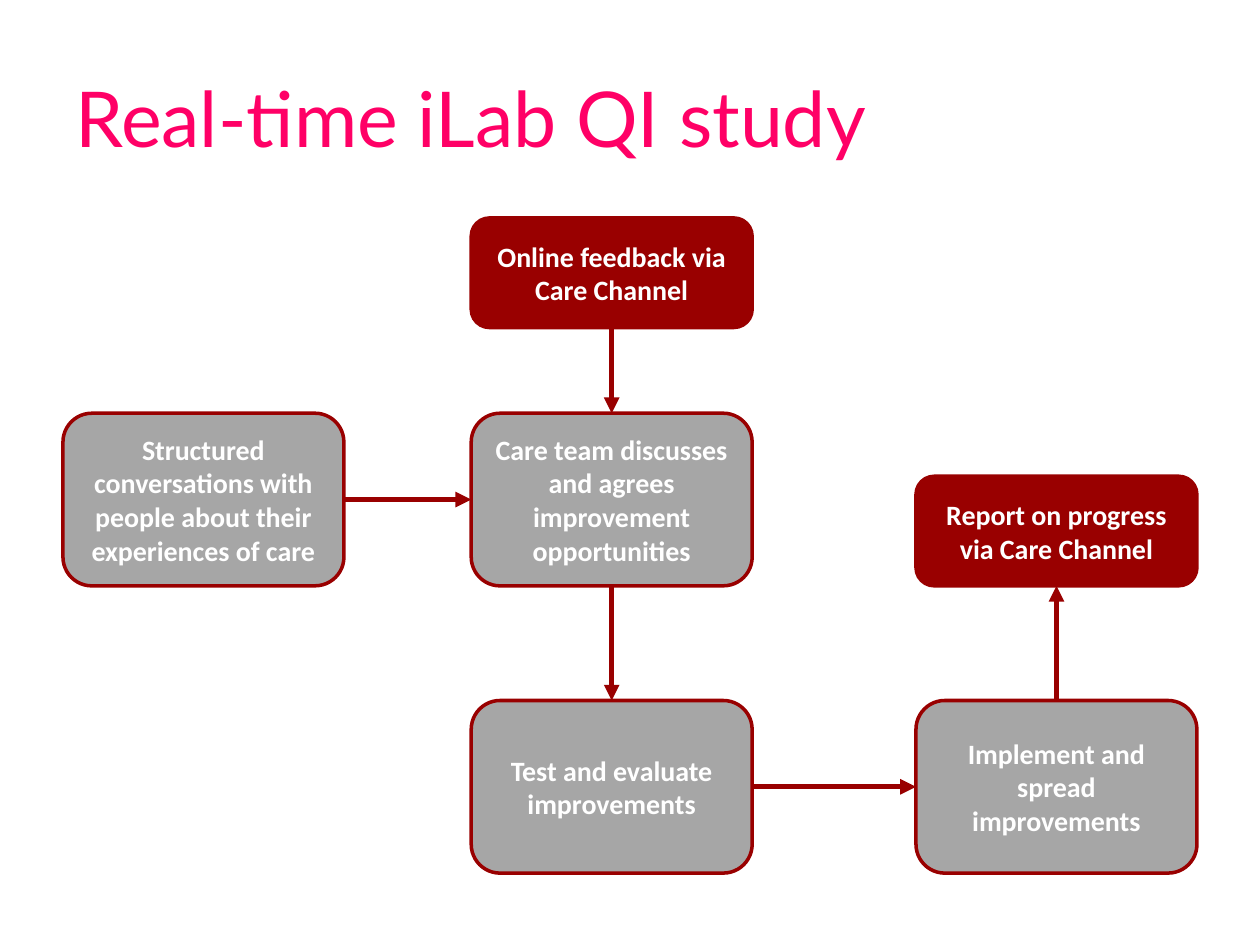
from pptx import Presentation
from pptx.dml.color import RGBColor
from pptx.enum.shapes import MSO_CONNECTOR, MSO_SHAPE
from pptx.enum.text import MSO_ANCHOR, PP_ALIGN
from pptx.oxml.ns import qn
from pptx.util import Inches, Pt
from lxml.etree import SubElement

RED, GREY, WHITE, PINK = "990000", "A6A6A6", "FFFFFF", "FF0066"
LEFT, MID, RIGHT = 0.5, 3.74, 7.27
WIDTH, TALL, SHORT = 2.23, 1.37, 0.87
ROW, BASE = 3.28, 5.56
TOP, WEST, BOTTOM, EAST = range(4)


def tint(color, value):
    color.rgb = RGBColor.from_string(value)


def write(frame, text, font, size, color, bold, align):
    frame.word_wrap = True
    frame.vertical_anchor = MSO_ANCHOR.MIDDLE
    para = frame.paragraphs[0]
    para.alignment = align
    run = para.add_run()
    run.text = text
    run.font.name = font
    run.font.size = Pt(size)
    run.font.bold = bold
    tint(run.font.color, color)


def add_title(slide, text):
    box = slide.shapes.add_textbox(Inches(0.5), Inches(0.3), Inches(9), Inches(1.25))
    write(box.text_frame, text, "Lato", 44, PINK, False, PP_ALIGN.LEFT)


def add_step(slide, text, left, top, height=TALL, fill=GREY):
    step = slide.shapes.add_shape(
        MSO_SHAPE.ROUNDED_RECTANGLE,
        Inches(left), Inches(top), Inches(WIDTH), Inches(height))
    step.shadow.inherit = False
    step.fill.solid()
    tint(step.fill.fore_color, fill)
    tint(step.line.color, RED)
    step.line.width = Pt(2)
    write(step.text_frame, text, "Calibri", 16, WHITE, True, PP_ALIGN.CENTER)
    return step


def add_arrow(slide, start, out, end, into):
    arrow = slide.shapes.add_connector(MSO_CONNECTOR.STRAIGHT, 0, 0, 0, 0)
    arrow.begin_connect(start, out)
    arrow.end_connect(end, into)
    tint(arrow.line.color, RED)
    arrow.line.width = Pt(3)
    SubElement(arrow.line._get_or_add_ln(), qn("a:tailEnd"), type="triangle")
    SubElement(arrow._element.spPr, qn("a:effectLst"))


def main():
    deck = Presentation()
    deck.slide_width, deck.slide_height = Inches(10), Inches(7.5)
    slide = deck.slides.add_slide(deck.slide_layouts[6])

    add_title(slide, "Real-time iLab QI study")
    talks = add_step(
        slide, "Structured conversations with people about their experiences of care",
        LEFT, ROW)
    team = add_step(
        slide, "Care team discusses and agrees improvement opportunities", MID, ROW)
    test = add_step(slide, "Test and evaluate improvements", MID, BASE)
    spread = add_step(slide, "Implement and spread improvements", RIGHT, BASE)
    online = add_step(
        slide, "Online feedback via Care Channel", MID, 1.73, SHORT, RED)
    report = add_step(
        slide, "Report on progress via Care Channel",
        RIGHT, ROW + TALL - SHORT, SHORT, RED)

    for link in (
        (talks, EAST, team, WEST),
        (online, BOTTOM, team, TOP),
        (team, BOTTOM, test, TOP),
        (test, EAST, spread, WEST),
        (spread, TOP, report, BOTTOM),
    ):
        add_arrow(slide, *link)

    deck.save("out.pptx")


if __name__ == "__main__":
    main()
